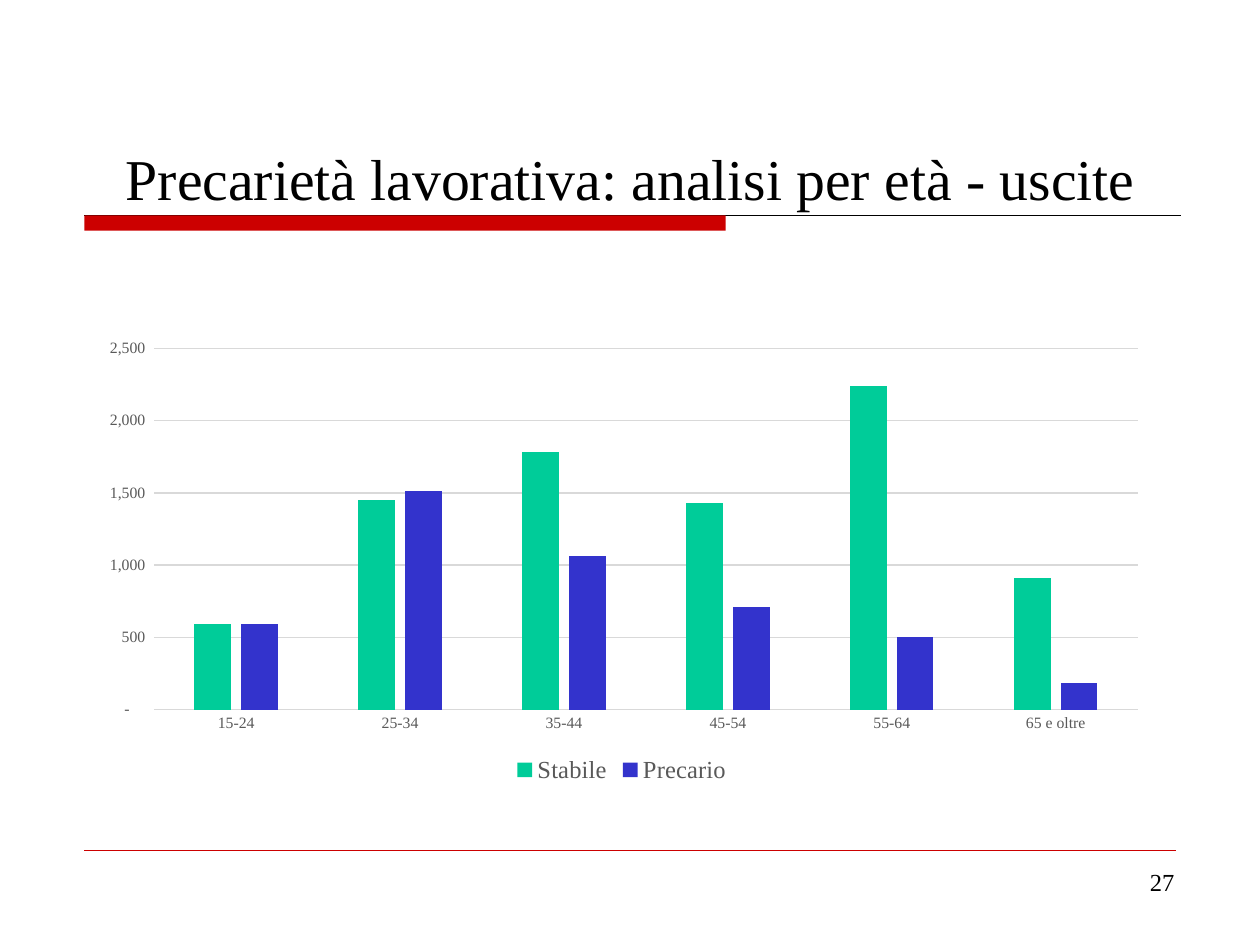
from lxml.etree import SubElement
from pptx import Presentation
from pptx.chart.data import CategoryChartData
from pptx.dml.color import RGBColor
from pptx.enum.chart import XL_CHART_TYPE, XL_LEGEND_POSITION, XL_TICK_MARK
from pptx.enum.shapes import MSO_CONNECTOR, MSO_SHAPE
from pptx.enum.text import MSO_ANCHOR, PP_ALIGN
from pptx.oxml.ns import qn
from pptx.util import Inches, Pt

FONT = "Times New Roman"
BLACK = RGBColor(0x00, 0x00, 0x00)
RED = RGBColor(0xCC, 0x00, 0x00)
GREEN = RGBColor(0x00, 0xCC, 0x99)
BLUE = RGBColor(0x33, 0x33, 0xCC)
GREY = RGBColor(0x59, 0x59, 0x59)
LIGHT = RGBColor(0xD9, 0xD9, 0xD9)

AGES = ["15-24", "25-34", "35-44", "45-54", "55-64", "65 e oltre"]
SERIES = [
    ("Stabile", [590, 1450, 1780, 1430, 2240, 910], GREEN),
    ("Precario", [590, 1510, 1060, 710, 500, 180], BLUE),
]
NUMBER_FORMAT = '_-* #,##0_-;\\-* #,##0_-;_-* "-"??_-;_-@_-'


def set_font(font, size, color):
    """Apply the slide's typeface with a size and colour."""
    font.name = FONT
    font.size = Pt(size)
    font.color.rgb = color


def add_text(s, text, x, y, w, h, size=14, align=PP_ALIGN.LEFT, anchor=MSO_ANCHOR.TOP):
    """Add a one-paragraph text box."""
    tf = s.shapes.add_textbox(Inches(x), Inches(y), Inches(w), Inches(h)).text_frame
    tf.word_wrap = True
    tf.vertical_anchor = anchor
    p = tf.paragraphs[0]
    p.alignment = align
    r = p.add_run()
    r.text = text
    set_font(r.font, size, BLACK)


def add_rule(s, x, y, w, color, width):
    """Add a horizontal line without a shadow."""
    line = s.shapes.add_connector(
        MSO_CONNECTOR.STRAIGHT, Inches(x), Inches(y), Inches(x + w), Inches(y))
    line.line.color.rgb = color
    line.line.width = Pt(width)
    SubElement(line._element.spPr, qn("a:effectLst"))


def add_header(s, x, y, w, h):
    """Add the title above its rule and red bar."""
    add_rule(s, x, y + 1.03, w, BLACK, 0.75)
    bar = s.shapes.add_shape(
        MSO_SHAPE.RECTANGLE, Inches(x), Inches(y + 1.03), Inches(5.09), Inches(0.12))
    bar.shadow.inherit = False
    bar.fill.solid()
    bar.fill.fore_color.rgb = RED
    bar.line.fill.background()
    add_text(s, "Precarietà lavorativa: analisi per età - uscite",
             x + 0.23, y, 8.25, h, size=33, anchor=MSO_ANCHOR.BOTTOM)


def add_age_chart(s, x, y, w, h):
    """Add the clustered columns by age group."""
    data = CategoryChartData()
    data.categories = AGES
    for name, values, _ in SERIES:
        data.add_series(name, values)
    chart = s.shapes.add_chart(
        XL_CHART_TYPE.COLUMN_CLUSTERED, Inches(x), Inches(y), Inches(w), Inches(h), data).chart
    set_font(chart.font, 10, BLACK)
    chart.has_title = False
    chart.has_legend = True
    chart.legend.position = XL_LEGEND_POSITION.BOTTOM
    chart.legend.include_in_layout = False
    set_font(chart.legend.font, 14, GREY)

    plot = chart.plots[0]
    plot.vary_by_categories = False
    plot.gap_width = 219
    plot.overlap = -27
    for series, (_, _, color) in zip(plot.series, SERIES):
        series.format.fill.solid()
        series.format.fill.fore_color.rgb = color

    ages, values = chart.category_axis, chart.value_axis
    for axis in (ages, values):
        axis.major_tick_mark = axis.minor_tick_mark = XL_TICK_MARK.NONE
        set_font(axis.tick_labels.font, 9, GREY)
    values.format.line.fill.background()
    values.minimum_scale, values.maximum_scale, values.major_unit = 0, 2500, 500
    values.tick_labels.number_format = NUMBER_FORMAT
    values.tick_labels.number_format_is_linked = False
    for line in (ages.format.line, values.major_gridlines.format.line):
        line.color.rgb = LIGHT
        line.width = Pt(0.75)


def add_footer(s, x, y, w, h):
    """Add the bottom rule and the slide number."""
    add_rule(s, x, y, w, RED, 0.25)
    add_text(s, "27", x + w - 1.42, y + 0.08, 1.51, h - 0.08, align=PP_ALIGN.RIGHT)


def main():
    """Build and save the slide."""
    prs = Presentation()
    prs.slide_width, prs.slide_height = Inches(10), Inches(7.5)
    s = prs.slides.add_slide(prs.slide_layouts[6])
    add_header(s, 0.67, 0.68, 8.7, 1.05)
    add_age_chart(s, 0.67, 2.62, 8.53, 3.64)
    add_footer(s, 0.67, 6.75, 8.66, 0.6)
    prs.save("out.pptx")


if __name__ == "__main__":
    main()
